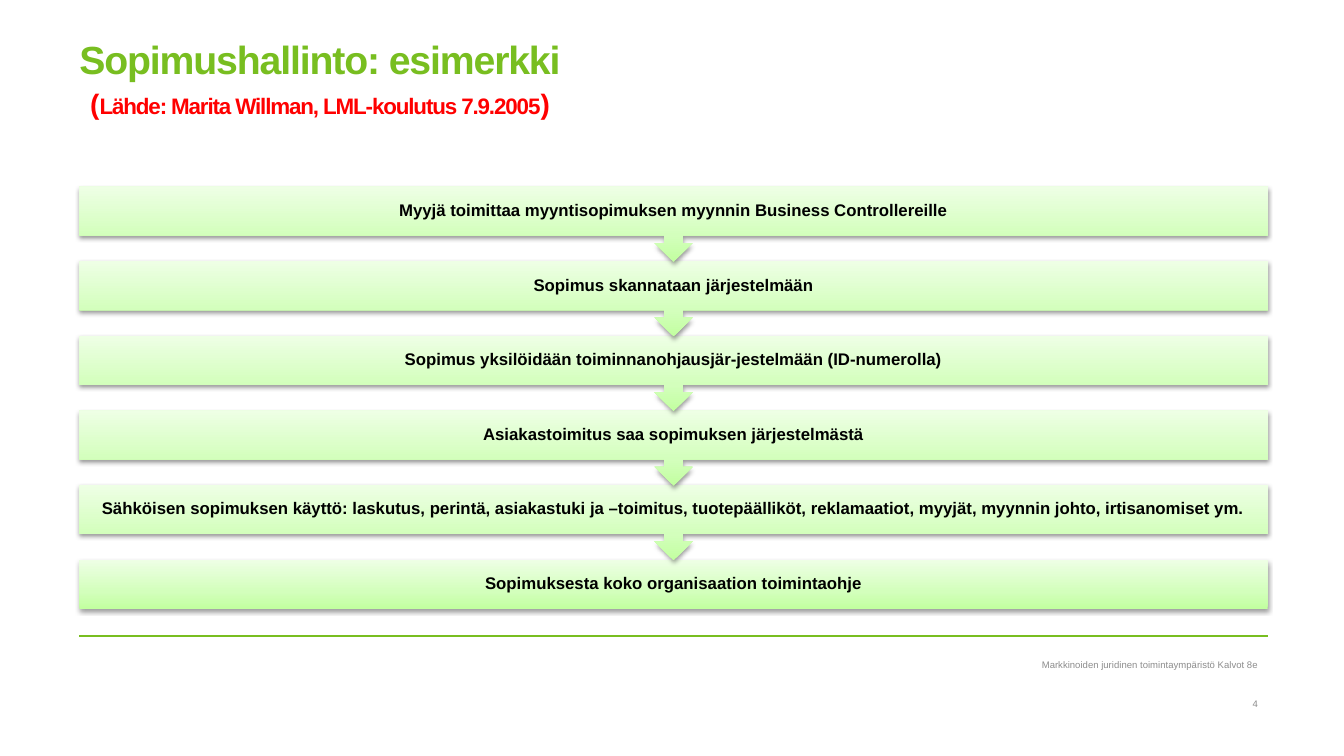
"""Build the contract management flow slide."""
from lxml.etree import SubElement
from pptx import Presentation
from pptx.dml.color import RGBColor
from pptx.enum.shapes import MSO_CONNECTOR, MSO_SHAPE
from pptx.enum.text import MSO_ANCHOR, MSO_AUTO_SIZE, PP_ALIGN
from pptx.oxml import parse_xml
from pptx.oxml.ns import nsdecls, qn
from pptx.util import Cm, Pt

STEPS = [
    "Myyjä toimittaa myyntisopimuksen myynnin Business Controllereille",
    "Sopimus skannataan järjestelmään",
    "Sopimus yksilöidään toiminnanohjausjär-jestelmään (ID-numerolla)",
    "Asiakastoimitus saa sopimuksen järjestelmästä",
    "Sähköisen sopimuksen käyttö: laskutus, perintä, asiakastuki ja –toimitus, "
    "tuotepäälliköt, reklamaatiot, myyjät, myynnin johto, irtisanomiset ym.",
    "Sopimuksesta koko organisaation toimintaohje",
]
TITLE = [
    ("Sopimushallinto: esimerkki\v ", 28, "green"),
    ("(", 20, "red"),
    ("Lähde: Marita Willman, LML-koulutus 7.9.2005", 16, "red"),
    (")", 20, "red"),
]
NOTES = [("Markkinoiden juridinen toimintaympäristö Kalvot 8e", 16.54, 0.43),
         ("4", 17.5, 0.46)]
COLORS = {"green": "78BE20", "red": "FF0000", "black": "000000", "gray": "8C8C8C"}
SHADES = [(0, "C2FFA0"), (35, "D3FFBC"), (100, "EEFFE5")]
LEFT, WIDTH = 2, 29.95
TOP, STEP, TALL, BOX = 4.7, 1.88, 1.9, 1.24


def style(font, size, color, bold=True):
    look = {"name": "Arial", "size": Pt(size), "bold": bold}
    for key, value in look.items():
        setattr(font, key, value)
    font.color.rgb = RGBColor.from_string(COLORS[color])


def setup(frame, anchor, pads):
    sides = ("margin_left", "margin_top", "margin_right", "margin_bottom")
    look = {"word_wrap": True, "auto_size": MSO_AUTO_SIZE.NONE,
            "vertical_anchor": anchor, **dict(zip(sides, map(Cm, pads)))}
    for key, value in look.items():
        setattr(frame, key, value)
    return frame.paragraphs[0]


def shade(shape):
    stops = "".join(f'<a:gs pos="{pos * 1000}"><a:srgbClr val="{color}"/></a:gs>'
                    for pos, color in SHADES)
    fill = parse_xml(f'<a:gradFill {nsdecls("a")} rotWithShape="1"><a:gsLst>{stops}'
                     '</a:gsLst><a:lin ang="16200000" scaled="0"/></a:gradFill>')
    glow = parse_xml(f'<a:effectLst {nsdecls("a")}><a:outerShdw blurRad="40000" '
                     'dist="20000" dir="5400000" rotWithShape="0">'
                     '<a:srgbClr val="000000"><a:alpha val="38000"/></a:srgbClr>'
                     '</a:outerShdw></a:effectLst>')
    shape.line.fill.background()
    props = shape.element.spPr
    props.find(qn("a:prstGeom")).addnext(fill)
    props.append(glow)


def add_title(slide):
    title = slide.shapes.title
    title.left, title.top, title.width, title.height = map(Cm, (LEFT, 1.07, WIDTH, 3.33))
    para = setup(title.text_frame, MSO_ANCHOR.TOP, (0, 0, 0, 0))
    para.alignment, para.line_spacing = PP_ALIGN.LEFT, 0.85
    for text, size, color in TITLE:
        for num, part in enumerate(text.split("\v")):
            if num:
                para.add_line_break()
            run = para.add_run()
            run.text = part
            style(run.font, size, color)
            run.font._element.set("spc", "-80")


def add_steps(slide):
    last = len(STEPS) - 1
    for num, text in reversed(list(enumerate(STEPS))):
        kind, tall = ((MSO_SHAPE.RECTANGLE, BOX) if num == last
                      else (MSO_SHAPE.DOWN_ARROW_CALLOUT, TALL))
        place = map(Cm, (LEFT, TOP + num * STEP, WIDTH, tall))
        shape = slide.shapes.add_shape(kind, *place)
        shade(shape)
        para = setup(shape.text_frame, MSO_ANCHOR.MIDDLE, (0.23,) * 4)
        para.text, para.alignment, para.line_spacing = text, PP_ALIGN.CENTER, 0.9
        style(para.runs[0].font, 12, "black")


def add_notes(slide):
    rule = slide.shapes.add_connector(
        MSO_CONNECTOR.STRAIGHT, *map(Cm, (LEFT, 16.03, LEFT + WIDTH, 16.03)))
    rule.line.width = Pt(1)
    rule.line.color.rgb = RGBColor.from_string(COLORS["green"])
    SubElement(rule.element.spPr, qn("a:effectLst"))
    for text, top, tall in NOTES:
        box = slide.shapes.add_textbox(*map(Cm, (18.29, top, 13.41, tall)))
        para = setup(box.text_frame, MSO_ANCHOR.MIDDLE, (0.25, 0.13, 0, 0.13))
        para.text, para.alignment = text, PP_ALIGN.RIGHT
        style(para.runs[0].font, 6.8, "gray", False)


def main():
    deck = Presentation()
    deck.slide_width, deck.slide_height = Cm(33.87), Cm(19.05)
    slide = deck.slides.add_slide(deck.slide_layouts[0])
    spare = slide.placeholders[1].element
    spare.getparent().remove(spare)
    add_title(slide)
    add_steps(slide)
    add_notes(slide)
    deck.save("out.pptx")


if __name__ == "__main__":
    main()
